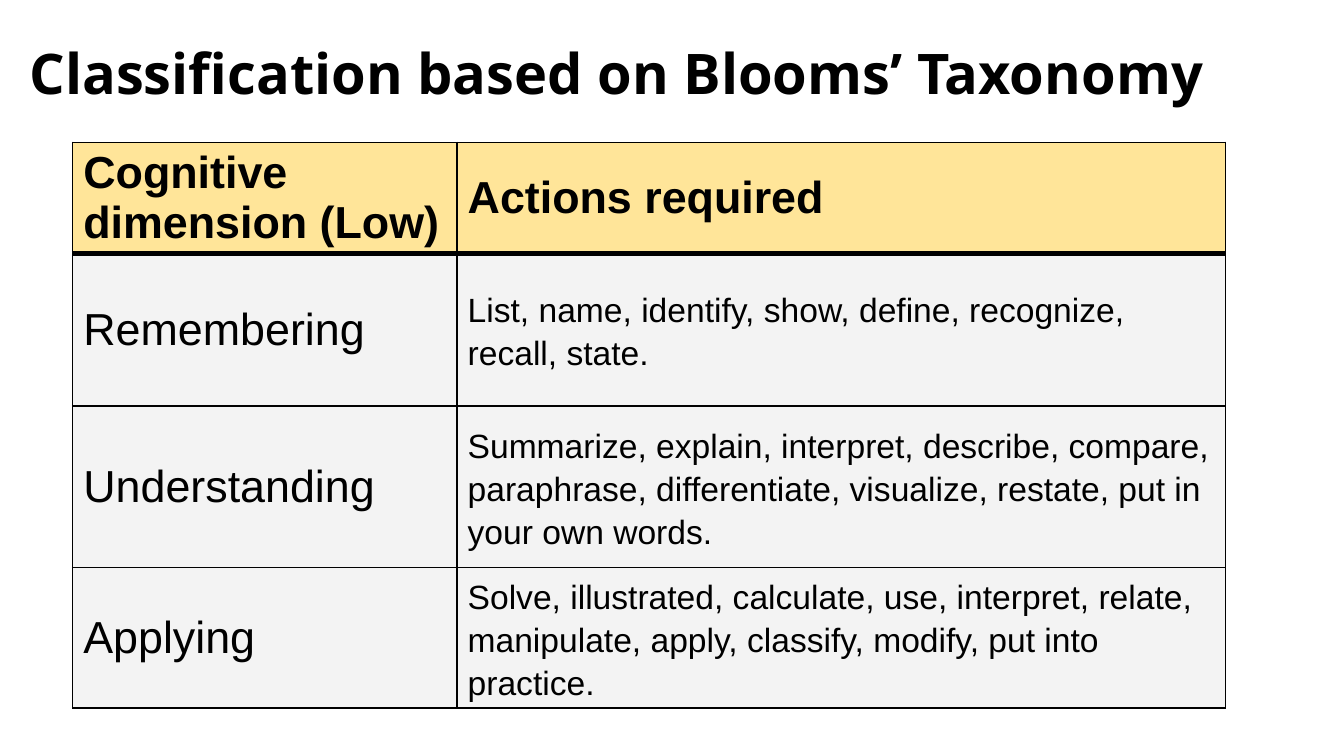
"""Build a slide that classifies actions by Bloom's taxonomy."""
import pptx
import pptx.dml.color
import pptx.enum.text
import pptx.oxml
import pptx.oxml.ns
import pptx.util
from pptx.util import Inches

BLACK = pptx.dml.color.RGBColor(0x00, 0x00, 0x00)
AMBER = pptx.dml.color.RGBColor(0xFF, 0xE5, 0x99)
GREY = pptx.dml.color.RGBColor(0xF3, 0xF3, 0xF3)

ROWS = [
    ("Cognitive dimension (Low)", "Actions required"),
    ("Remembering",
     "List, name, identify, show, define, recognize, recall, state."),
    ("Understanding",
     "Summarize, explain, interpret, describe, compare, paraphrase, "
     "differentiate, visualize, restate, put in your own words."),
    ("Applying",
     "Solve, illustrated, calculate, use, interpret, relate, manipulate, "
     "apply, classify, modify, put into practice."),
]


def write(tf, text, size=24, font="Arial", bold=False, spacing=1.0):
    p = tf.paragraphs[0]
    p.alignment = pptx.enum.text.PP_ALIGN.LEFT
    p.line_spacing = spacing
    r = p.add_run()
    r.text = text
    r.font.name = font
    r.font.size = pptx.util.Pt(size)
    r.font.bold = bold
    r.font.color.rgb = BLACK


class Deck:
    def __init__(self, width, height):
        self.prs = pptx.Presentation()
        self.prs.slide_width = Inches(width)
        self.prs.slide_height = Inches(height)
        self.s = self.prs.slides.add_slide(self.prs.slide_layouts[5])
        self.middle = pptx.enum.text.MSO_ANCHOR.MIDDLE

    def title(self, text, left, top, width, height):
        sp = self.s.shapes.title
        sp.left, sp.top = Inches(left), Inches(top)
        sp.width, sp.height = Inches(width), Inches(height)
        tf = sp.text_frame
        tf.auto_size = pptx.enum.text.MSO_AUTO_SIZE.NONE
        tf.vertical_anchor = self.middle
        tf.margin_left = tf.margin_right = Inches(0.07)
        tf.margin_top = tf.margin_bottom = Inches(0.04)
        write(tf, text, size=30, font="Noto Sans", bold=True, spacing=0.9)

    def table(self, rows, left, top, widths, heights):
        table = self.s.shapes.add_table(
            len(rows), len(widths), Inches(left), Inches(top),
            Inches(sum(widths)), Inches(sum(heights))).table
        for column, width in zip(table.columns, widths):
            column.width = Inches(width)
        for i, (texts, height) in enumerate(zip(rows, heights)):
            table.rows[i].height = Inches(height)
            for j, text in enumerate(texts):
                self.cell(table.cell(i, j), text, i, j)

    def cell(self, cell, text, i, j):
        header = i == 0
        detail = j == 1 and not header
        cell.vertical_anchor = self.middle
        cell.margin_left = cell.margin_right = Inches(0.08)
        cell.margin_top = cell.margin_bottom = Inches(0.04)
        self.borders(cell, top=3 if i == 1 else 1, bottom=3 if header else 1)
        cell.fill.solid()
        cell.fill.fore_color.rgb = AMBER if header else GREY
        write(cell.text_frame, text, size=18 if detail else 24, bold=header,
              spacing=1.15 if detail else 1.0)

    def borders(self, cell, top, bottom):
        pr = cell._tc.get_or_add_tcPr()
        for side, width in (("L", 1), ("R", 1), ("T", top), ("B", bottom)):
            pr.append(pptx.oxml.parse_xml(
                f'<a:ln{side} {pptx.oxml.ns.nsdecls("a")} '
                f'w="{pptx.util.Pt(width)}"><a:solidFill>'
                f'<a:srgbClr val="{BLACK}"/></a:solidFill></a:ln{side}>'))


def main():
    deck = Deck(10, 10 * 9 / 16)
    deck.title("Classification based on Blooms’ Taxonomy",
               0.15, 0.34, 9.15, 0.45)
    deck.table(ROWS, 0.54, 1.06, [2.86, 5.72], [0.53, 1.14, 1.2, 0.98])
    deck.prs.save("out.pptx")


if __name__ == "__main__":
    main()
